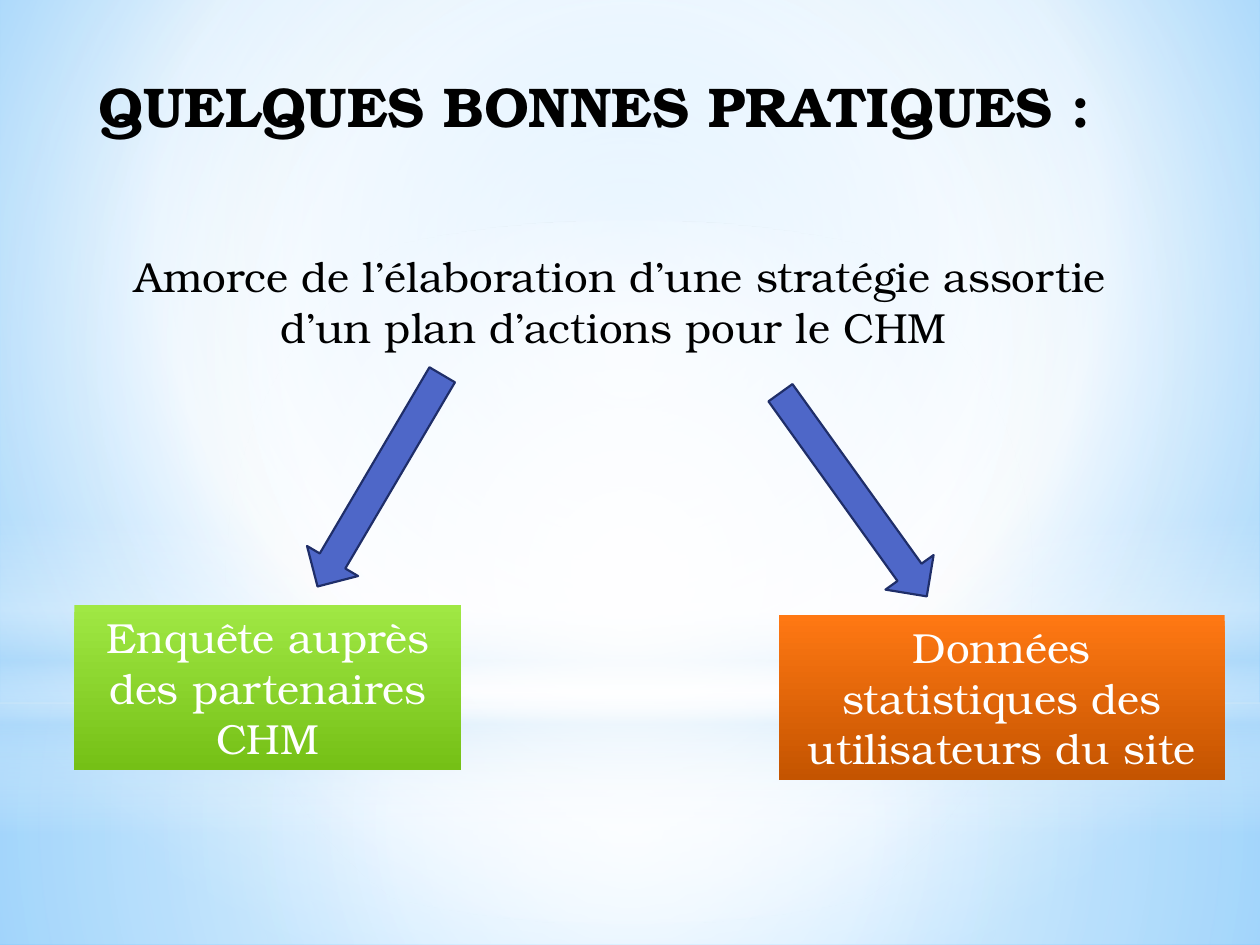
import pptx
import pptx.dml.color
import pptx.enum.shapes
import pptx.enum.text
import pptx.oxml
import pptx.oxml.ns
import pptx.util

Inches = pptx.util.Inches
SHAPE = pptx.enum.shapes.MSO_SHAPE
CENTER = (50, 50, 50, 50)


def color(value):
    return pptx.dml.color.RGBColor.from_string(value)


class Deck:
    font = "TeX Gyre Bonum"

    def __init__(self, width, height):
        self.prs = pptx.Presentation()
        self.prs.slide_width = Inches(width)
        self.prs.slide_height = Inches(height)
        self.s = self.prs.slides.add_slide(self.prs.slide_layouts[6])

    def gradient(self, fill, parent, stops, focus=None):
        fill.solid()
        gs = "".join(
            f'<a:gs pos="{pos * 1000}"><a:srgbClr val="{rgb}">'
            f'<a:alpha val="{alpha * 1000}"/></a:srgbClr></a:gs>'
            for pos, rgb, alpha in stops
        )
        if focus:
            l, t, r, b = (v * 1000 for v in focus)
            shade = (f'<a:path path="circle"><a:fillToRect l="{l}" t="{t}" '
                     f'r="{r}" b="{b}"/></a:path>')
        else:
            shade = '<a:lin ang="5400000" scaled="0"/>'
        grad = pptx.oxml.parse_xml(
            f'<a:gradFill {pptx.oxml.ns.nsdecls("a")} rotWithShape="1">'
            f'<a:gsLst>{gs}</a:gsLst>{shade}</a:gradFill>'
        )
        solid = parent.find(pptx.oxml.ns.qn("a:solidFill"))
        parent.replace(solid, grad)

    def background(self, stops, focus):
        fill = self.s.background.fill
        fill.solid()
        parent = self.s.element.xpath("p:cSld/p:bg/p:bgPr")[0]
        self.gradient(fill, parent, stops, focus)

    def shape(self, kind, box):
        sp = self.s.shapes.add_shape(kind, *map(Inches, box))
        sp.shadow.inherit = False
        sp.line.fill.background()
        return sp

    def panel(self, kind, box, stops, focus=None):
        sp = self.shape(kind, box)
        self.gradient(sp.fill, sp.element.spPr, stops, focus)
        return sp

    def add_text(self, sp, text, size, rgb, bold=False):
        tf = sp.text_frame
        tf.word_wrap = True
        p = tf.paragraphs[0]
        p.alignment = pptx.enum.text.PP_ALIGN.CENTER
        r = p.add_run()
        r.text = text
        r.font.name = self.font
        r.font.size = pptx.util.Pt(size)
        r.font.bold = bold
        r.font.color.rgb = color(rgb)

    def text_box(self, box, text, size, bold=False):
        sp = self.s.shapes.add_textbox(*map(Inches, box))
        self.add_text(sp, text, size, "000000", bold)

    def card(self, box, text, top, bottom):
        sp = self.panel(SHAPE.RECTANGLE, box, [(0, top, 100), (100, bottom, 100)])
        self.add_text(sp, text, 24, "FFFFFF")

    def arrow(self, box, rotation):
        sp = self.shape(SHAPE.DOWN_ARROW, box)
        sp.rotation = rotation
        sp.fill.solid()
        sp.fill.fore_color.rgb = color("4E67C8")
        sp.line.color.rgb = color("1F2E69")
        sp.line.width = pptx.util.Pt(1.25)


def main():
    deck = Deck(10, 7.5)
    deck.background([(0, "9ED5FF", 100), (60, "FFFFFF", 100), (100, "5BB9FF", 100)],
                    (20, 10, 20, 60))
    deck.panel(SHAPE.RECTANGLE, (0, 5.58, 10, 1.92),
               [(0, "FFFFFF", 91), (37, "FFFFFF", 76), (100, "B4DCFA", 79)], CENTER)
    deck.panel(SHAPE.RECTANGLE, (0, 0, 10, 5.58),
               [(0, "FFFFFF", 89), (48, "FFFFFF", 62), (100, "B4DCFA", 79)], CENTER)
    deck.panel(SHAPE.RECTANGLE, (0, 4.12, 10, 2.5),
               [(0, "FFFFFF", 0), (29, "FFFFFF", 30), (45, "B4DCFA", 40),
                (55, "FFFFFF", 26), (65, "B4DCFA", 60), (100, "FFFFFF", 0)])
    deck.panel(SHAPE.OVAL, (0, 1.75, 10, 5.58),
               [(0, "FFFFFF", 100), (56, "FFFFFF", 0)], CENTER)

    deck.text_box((0.67, 0.52, 8.11, 0.64), "QUELQUES BONNES PRATIQUES :", 32, True)
    deck.text_box((0.67, 1.94, 8.5, 0.91),
                  "Amorce de l’élaboration d’une stratégie assortie "
                  "d’un plan d’actions pour le CHM ", 24)
    deck.card((0.59, 4.8, 3.07, 1.31), "Enquête auprès des partenaires CHM",
              "A0E844", "75C016")
    deck.card((6.18, 4.88, 3.54, 1.31), "Données statistiques des utilisateurs du site",
              "FF7813", "C45400")
    deck.arrow((2.78, 2.84, 0.47, 1.95), 30.5)
    deck.arrow((6.54, 2.93, 0.47, 1.99), 324.3)
    deck.prs.save("out.pptx")


if __name__ == "__main__":
    main()
